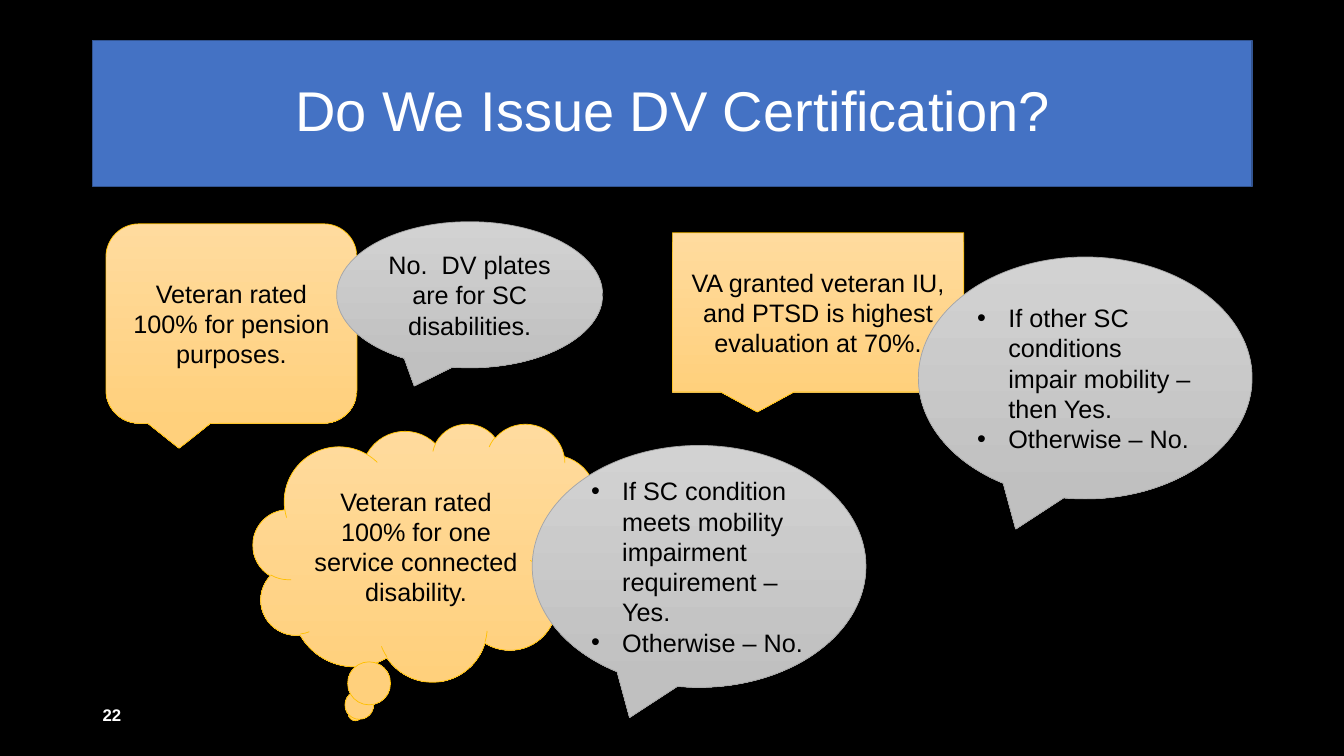
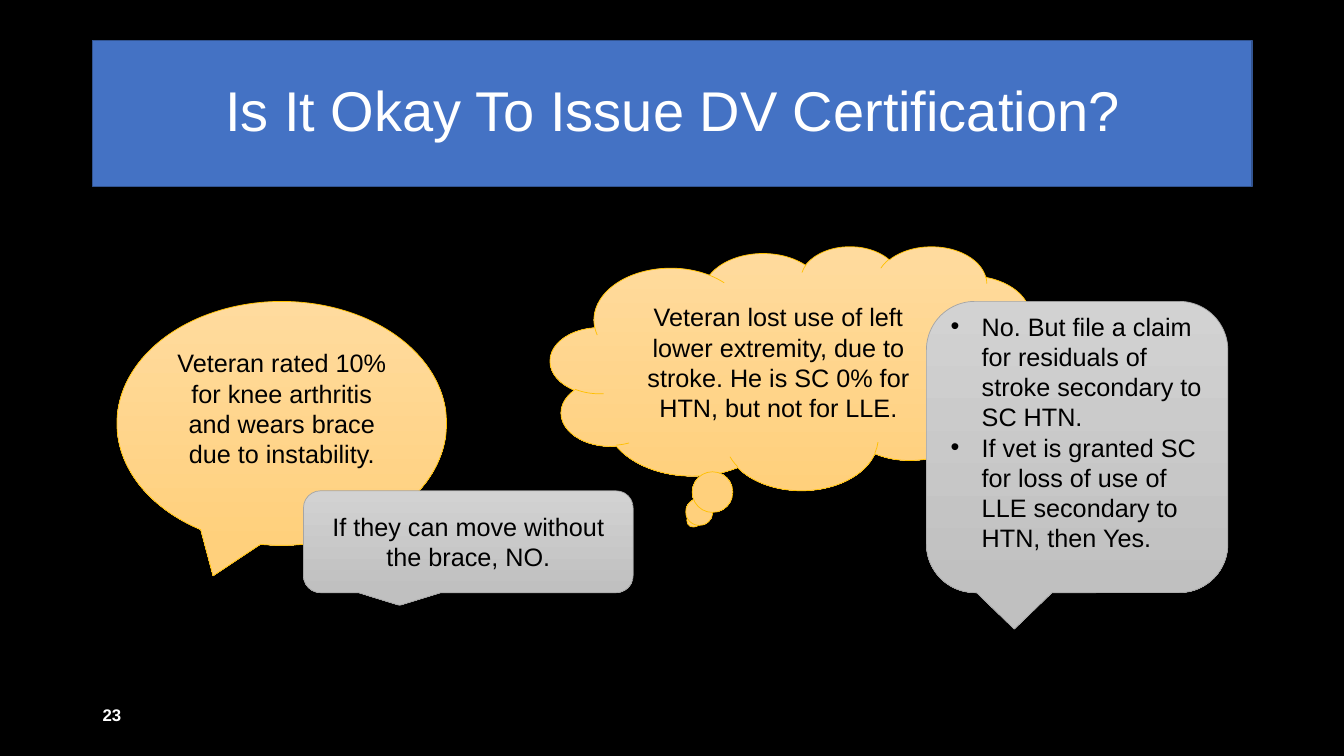
from pptx import Presentation
from pptx.dml.color import RGBColor
from pptx.enum.shapes import MSO_SHAPE
from pptx.enum.text import MSO_ANCHOR, PP_ALIGN
from pptx.oxml.ns import qn
from pptx.util import Emu, Inches, Pt

RECT = MSO_SHAPE.RECTANGLE
SQUARE = MSO_SHAPE.RECTANGULAR_CALLOUT
ROUNDED = MSO_SHAPE.ROUNDED_RECTANGULAR_CALLOUT
OVAL = MSO_SHAPE.OVAL_CALLOUT
CLOUD = MSO_SHAPE.CLOUD_CALLOUT
LEFT, CENTER = PP_ALIGN.LEFT, PP_ALIGN.CENTER
MIDDLE = MSO_ANCHOR.MIDDLE

SLIDE_W, SLIDE_H = Inches(13.333), Inches(7.5)
FONT = "Arial"
BLACK, WHITE = "000000", "FFFFFF"
BAND, BAND_EDGE = "4472C4", "325491"
# Bubble styles: gradient top, gradient bottom, outline
CASE = ("FFDB9E", "FFD07C", "FFC000")
ANSWER = ("D2D2D2", "C0C0C0", "A5A5A5")

# Boxes are left, top, width, height in percent of the slide
TITLE_BOX = (6.9, 5.33, 86.25, 19.33)
NUMBER_BOX = (6.9, 91.87, 15.75, 5.33)
INDENT = Inches(0.31)
RAISED = Inches(0.35)  # bottom inset that lifts text by half a line


def color(hex_code):
    return RGBColor.from_string(hex_code)


def place(box):
    return [Emu(round(share * side / 100))
            for share, side in zip(box, (SLIDE_W, SLIDE_H) * 2)]


def add_bullet(paragraph):
    props = paragraph._p.get_or_add_pPr()
    props.set("marL", str(INDENT))
    props.set("indent", str(-INDENT))
    font = props.makeelement(qn("a:buFont"), {"typeface": FONT})
    mark = props.makeelement(qn("a:buChar"), {"char": "•"})
    props.extend([font, mark])


def write(shape, lines, size=18, ink=BLACK, bold=False, align=CENTER,
          bullets=False, spacing=None, bottom=None):
    frame = shape.text_frame
    frame.word_wrap = True
    frame.vertical_anchor = MIDDLE
    if bottom is not None:
        frame.margin_bottom = bottom
    for index, line in enumerate(lines):
        paragraph = frame.add_paragraph() if index else frame.paragraphs[0]
        if bullets:
            add_bullet(paragraph)
        paragraph.alignment = LEFT if bullets else align
        if spacing:
            paragraph.line_spacing = spacing
        run = paragraph.add_run()
        run.text = line
        run.font.name = FONT
        run.font.size = Pt(size)
        run.font.bold = bold
        run.font.color.rgb = color(ink)


def add_outlined(slide, preset, box, edge, width):
    shape = slide.shapes.add_shape(preset, *place(box))
    shape.shadow.inherit = False
    shape.line.color.rgb = color(edge)
    shape.line.width = Pt(width)
    return shape


def add_bubble(slide, preset, style, box, *lines, **text_format):
    top, bottom, edge = style
    bubble = add_outlined(slide, preset, box, edge, 0.5)
    bubble.fill.gradient()
    bubble.fill.gradient_angle = 270
    for stop, shade in zip(bubble.fill.gradient_stops, (top, bottom)):
        stop.color.rgb = color(shade)
    write(bubble, lines, **text_format)


def start_slide(deck, title, number):
    slide = deck.slides.add_slide(deck.slide_layouts[6])
    slide.background.fill.solid()
    slide.background.fill.fore_color.rgb = color(BLACK)
    # Title band
    band = add_outlined(slide, RECT, TITLE_BOX, BAND_EDGE, 1)
    band.fill.solid()
    band.fill.fore_color.rgb = color(BAND)
    write(band, [title], size=40, ink=WHITE, spacing=0.9)
    # Page number
    page = slide.shapes.add_textbox(*place(NUMBER_BOX))
    write(page, [str(number)], size=12, ink=WHITE, bold=True, align=LEFT)
    return slide


def build_issue_slide(deck):
    slide = start_slide(deck, "Do We Issue DV Certification?", 22)
    # Pension rating
    add_bubble(slide, ROUNDED, CASE, (7.88, 29.6, 18.68, 26.4),
               "Veteran rated 100% for pension purposes.")
    add_bubble(slide, OVAL, ANSWER, (25.05, 29.33, 19.8, 19.33),
               "No.  DV plates are for SC disabilities.")
    # Single disability and individual unemployability
    add_bubble(slide, CLOUD, CASE, (18.83, 56, 26.1, 34.13),
               "Veteran rated 100% for one service connected disability.")
    add_bubble(slide, SQUARE, CASE, (50.03, 30.8, 21.68, 21.07),
               "VA granted veteran IU, and PTSD is highest evaluation at 70%.")
    # Conditional answers
    add_bubble(slide, OVAL, ANSWER, (68.33, 34, 24.83, 32),
               "If other SC conditions impair mobility – then Yes.",
               "Otherwise – No.", bullets=True)
    add_bubble(slide, OVAL, ANSWER, (39.6, 58.93, 24.83, 32),
               "If SC condition meets mobility impairment requirement – Yes.",
               "Otherwise – No.", bullets=True)


def build_okay_slide(deck):
    slide = start_slide(deck, "Is It Okay To Issue DV Certification?", 23)
    # Lost use of a leg
    add_bubble(slide, CLOUD, CASE, (40.95, 32.53, 36.53, 32.27),
               "Veteran lost use of left lower extremity, due to stroke. "
               "He is SC 0% for HTN, but not for LLE.")
    add_bubble(slide, ROUNDED, ANSWER, (68.93, 39.87, 22.43, 38.53),
               "No. But file a claim for residuals of stroke secondary to "
               "SC HTN.",
               "If vet is granted SC for loss of use of LLE secondary to "
               "HTN, then Yes.", bullets=True, bottom=RAISED)
    # Knee brace
    add_bubble(slide, OVAL, CASE, (8.7, 39.87, 24.53, 32.27),
               "Veteran rated 10% for knee arthritis and wears brace due to "
               "instability.", bottom=RAISED)
    add_bubble(slide, ROUNDED, ANSWER, (22.58, 64.93, 24.53, 13.47),
               "If they can move without the brace, NO.")


def main():
    deck = Presentation()
    deck.slide_width, deck.slide_height = SLIDE_W, SLIDE_H
    build_issue_slide(deck)
    build_okay_slide(deck)
    deck.save("out.pptx")


if __name__ == "__main__":
    main()
